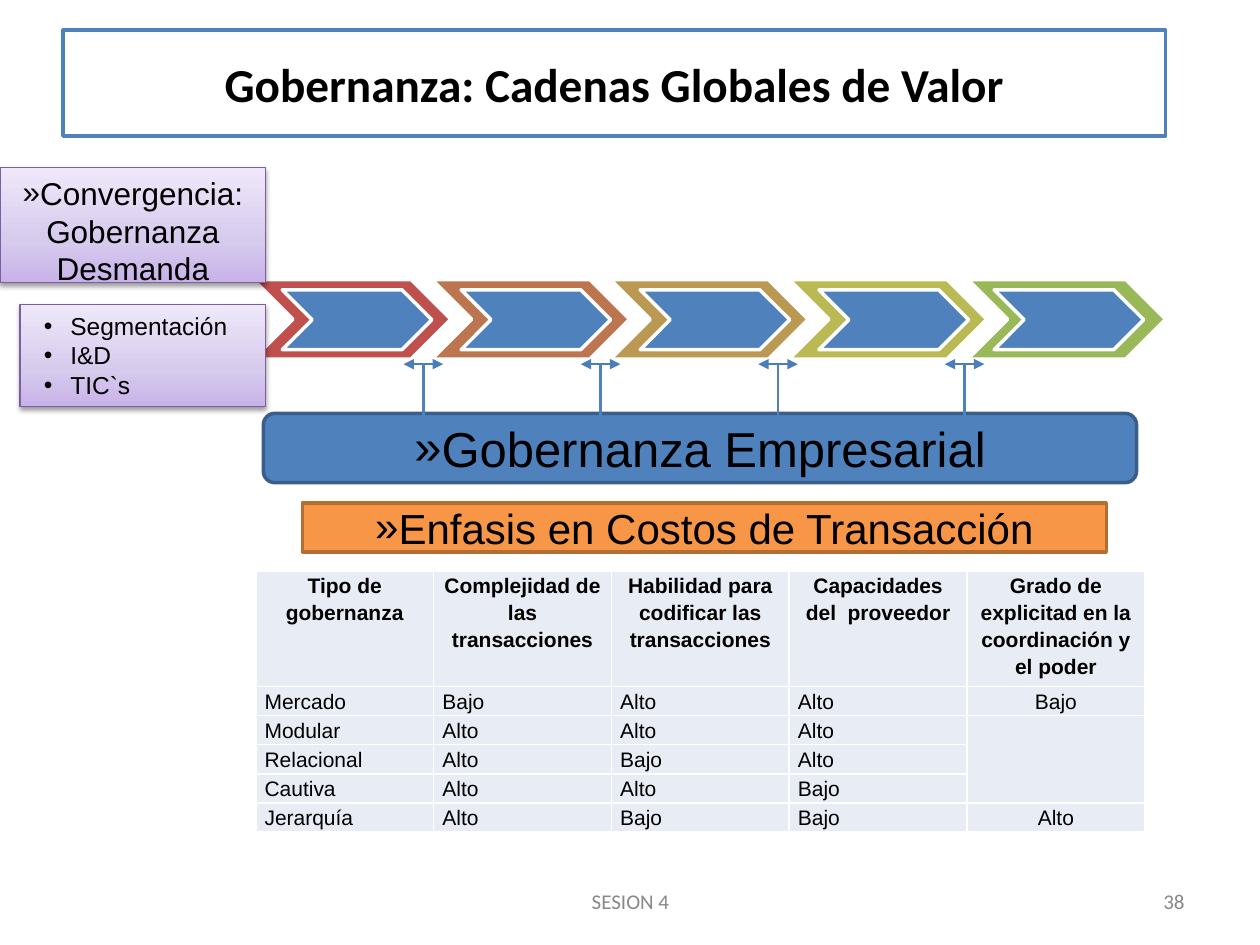
import pptx
import pptx.util
import pptx.dml.color
import pptx.enum.shapes
import pptx.enum.text
import pptx.oxml.ns
import lxml.etree

Pt = pptx.util.Pt
SHAPE = pptx.enum.shapes.MSO_SHAPE
ALIGN = pptx.enum.text.PP_ALIGN
ANCHOR = pptx.enum.text.MSO_ANCHOR
qn = pptx.oxml.ns.qn

THEME = {
    "body": "Arial", "heading": "Calibri",
    "black": "000000", "white": "FFFFFF", "gray": "888888",
    "blue": "4F81BD", "dark_blue": "395E89", "arrow": "4A7DBA",
    "orange": "F79646", "dark_orange": "B46D33",
    "purple": "7C5F9F", "cell": "E8ECF4",
    "lilac": [(0, "C8B2E9"), (35, "D6CAED"), (100, "EFE8FA")],
    "chain": ["BF504D", "BD754F", "BB9952", "BABA55", "99B958"],
    "title_size": 27, "bar_size": 28, "emphasis_size": 24,
    "callout_size": 18, "list_size": 14, "small_size": 12,
}

TITLE = "Gobernanza: Cadenas Globales de Valor"
CONVERGENCE = ["Convergencia: Gobernanza Desmanda"]
DRIVERS = ["Segmentación", "I&D", "TIC`s"]
BARS = [
    ("Gobernanza Empresarial", SHAPE.ROUNDED_RECTANGLE, (150.5, 236.2, 499, 39.6),
     "blue", "dark_blue", "bar_size", -13.5),
    ("Enfasis en Costos de Transacción", SHAPE.RECTANGLE, (172.8, 287.3, 459.4, 28.1),
     "orange", "dark_orange", "emphasis_size", -12),
]
HEADER = ["Tipo de gobernanza", "Complejidad de las transacciones",
          "Habilidad para codificar las transacciones",
          "Capacidades del  proveedor",
          "Grado de explicitad en la coordinación y el poder"]
ROWS = [
    ["Mercado", "Bajo", "Alto", "Alto", "Bajo"],
    ["Modular", "Alto", "Alto", "Alto", ""],
    ["Relacional", "Alto", "Bajo", "Alto", ""],
    ["Cautiva", "Alto", "Alto", "Bajo", ""],
    ["Jerarquía", "Alto", "Bajo", "Bajo", "Alto"],
]
FOOTERS = [("38", (516.2, 500.4, 167.8, 28.8), ALIGN.RIGHT),
           ("SESION 4", (246.2, 500.4, 228.2, 28.8), ALIGN.CENTER)]
LINK_CENTERS = [241.9, 343.2, 444.6, 551.2]
STAGE_LEFTS = [161.3, 263.5, 365.8, 468, 568.1]


def rgb(color):
    return pptx.dml.color.RGBColor.from_string(color)


def add_xml(parent, tag, **attributes):
    return lxml.etree.SubElement(parent, qn(tag), attributes)


def write_text(frame, lines, size, font=THEME["body"], color=THEME["black"], bold=False,
               align=ALIGN.LEFT, bullet=None, margin=0, indent=0, spacing=None, level=0):
    for index, line in enumerate(lines):
        paragraph = frame.paragraphs[0] if index == 0 else frame.add_paragraph()
        paragraph.alignment = align
        paragraph.level = level
        if spacing:
            paragraph.line_spacing = spacing
        if bullet:
            properties = paragraph._p.get_or_add_pPr()
            properties.set("marL", str(Pt(margin)))
            properties.set("indent", str(Pt(indent)))
            add_xml(add_xml(properties, "a:buClr"), "a:srgbClr", val=color)
            add_xml(properties, "a:buFont", typeface=THEME["body"])
            add_xml(properties, "a:buChar", char=bullet)
        if not line:
            add_xml(paragraph._p, "a:endParaRPr", sz=str(size * 100))
            continue
        run = paragraph.add_run()
        run.text = line
        run.font.size = Pt(size)
        run.font.name = font
        run.font.bold = bold
        run.font.color.rgb = rgb(color)


def place(shape, box):
    shape.left, shape.top, shape.width, shape.height = map(Pt, box)


def prepare_frame(frame, anchor=ANCHOR.MIDDLE):
    frame.word_wrap = True
    frame.auto_size = pptx.enum.text.MSO_AUTO_SIZE.NONE
    frame.vertical_anchor = anchor
    frame.margin_left = frame.margin_right = Pt(7.2)
    frame.margin_top = frame.margin_bottom = Pt(3.6)
    return frame


def paint(shape, fill, line, width=2):
    shape.fill.solid()
    shape.fill.fore_color.rgb = rgb(fill)
    shape.line.color.rgb = rgb(line)
    shape.line.width = Pt(width)


def add_shape(slide, kind, box, fill, line, width=2):
    shape = slide.shapes.add_shape(kind, *map(Pt, box))
    shape.shadow.inherit = False
    paint(shape, fill, line, width)
    return shape


def add_callout(slide, box):
    shape = add_shape(slide, SHAPE.RECTANGLE, box, THEME["white"], THEME["purple"], 0.75)
    shape.fill.gradient()
    shape.fill.gradient_angle = 90
    stops = shape._element.spPr.find(".//" + qn("a:gsLst"))
    for stop in list(stops):
        stops.remove(stop)
    for position, color in THEME["lilac"]:
        stop = add_xml(stops, "a:gs", pos=str(position * 1000))
        add_xml(stop, "a:srgbClr", val=color)
    shadow = add_xml(shape._element.spPr.find(qn("a:effectLst")), "a:outerShdw",
                     blurRad=str(Pt(3.1)), dist=str(Pt(1.6)), dir="5400000", rotWithShape="0")
    add_xml(add_xml(shadow, "a:srgbClr", val=THEME["black"]), "a:alpha", val="38000")
    return prepare_frame(shape.text_frame, ANCHOR.TOP)


def add_line(slide, start, end, color, arrows=False):
    line = slide.shapes.add_connector(pptx.enum.shapes.MSO_CONNECTOR.STRAIGHT,
                                      *map(Pt, start + end))
    line.line.color.rgb = rgb(color)
    line.line.width = Pt(1.5)
    if arrows:
        for tag in ("a:headEnd", "a:tailEnd"):
            add_xml(line.line._get_or_add_ln(), tag, type="triangle")
    add_xml(line._element.spPr, "a:effectLst")


def add_governance_table(slide):
    heights = [66.2] + [16.6] * len(ROWS)
    frame = slide.shapes.add_table(len(heights), len(HEADER), Pt(146.2), Pt(326.2),
                                   Pt(508), Pt(sum(heights)))
    table = frame.table
    table.first_row = table.horz_banding = False
    for column in table.columns:
        column.width = Pt(101.6)
    for row, height in zip(table.rows, heights):
        row.height = Pt(height)
    for row_index, values in enumerate([HEADER] + ROWS):
        for column_index, value in enumerate(values):
            cell = table.cell(row_index, column_index)
            centered = row_index == 0 or column_index == len(HEADER) - 1
            cell.margin_left = cell.margin_right = Pt(5)
            cell.margin_top = cell.margin_bottom = Pt(0)
            write_text(cell.text_frame, [value], THEME["small_size"], bold=row_index == 0,
                       align=ALIGN.CENTER if centered else ALIGN.JUSTIFY, spacing=1.15)
            properties = cell._tc.get_or_add_tcPr()
            for side in ("a:lnL", "a:lnR", "a:lnT", "a:lnB"):
                border = add_xml(properties, side, w=str(Pt(1)))
                add_xml(add_xml(border, "a:solidFill"), "a:srgbClr", val=THEME["white"])
            cell.fill.solid()
            cell.fill.fore_color.rgb = rgb(THEME["cell"])
    table.cell(2, 4).merge(table.cell(4, 4))


def main():
    presentation = pptx.Presentation()
    presentation.slide_width, presentation.slide_height = Pt(720), Pt(540)
    slide = presentation.slides.add_slide(presentation.slide_layouts[5])

    title = slide.shapes.title
    place(title, (36, 17.3, 630, 60.5))
    paint(title, THEME["white"], THEME["blue"])
    write_text(prepare_frame(title.text_frame), [TITLE], THEME["title_size"],
               font=THEME["heading"], bold=True, align=ALIGN.CENTER)

    for index, color in enumerate(THEME["chain"]):
        add_shape(slide, SHAPE.CHEVRON, (144.7 + 102.1 * index, 159.8, 113, 45.4),
                  color, THEME["white"])
    write_text(add_callout(slide, (11.5, 174.2, 140.4, 58.3)), DRIVERS, THEME["list_size"],
               bullet="•", margin=21.6, indent=-15.1, level=1)
    add_governance_table(slide)

    for text, kind, box, fill, line, size, indent in BARS:
        bar = add_shape(slide, kind, box, THEME[fill], THEME[line])
        write_text(prepare_frame(bar.text_frame), [text], THEME[size],
                   align=ALIGN.CENTER, bullet="»", indent=indent)
    for left in STAGE_LEFTS:
        add_shape(slide, SHAPE.CHEVRON, (left, 165.6, 85.5, 34.2), THEME["blue"], THEME["white"])
    for center in LINK_CENTERS:
        add_line(slide, (center + 11.3, 208.1), (center - 11.3, 208.1), THEME["arrow"], True)
        add_line(slide, (center, 208.1), (center, 247.7 - 10.8 + 10.8), THEME["blue"])

    write_text(add_callout(slide, (0, 95.8, 151.9, 65.5)), CONVERGENCE, THEME["callout_size"],
               align=ALIGN.CENTER, bullet="»", indent=-8.6)
    for text, box, align in FOOTERS:
        footer = slide.shapes.add_textbox(*map(Pt, box))
        write_text(prepare_frame(footer.text_frame), [text], THEME["small_size"],
                   font=THEME["heading"], color=THEME["gray"], align=align)
    presentation.save("out.pptx")


if __name__ == "__main__":
    main()
